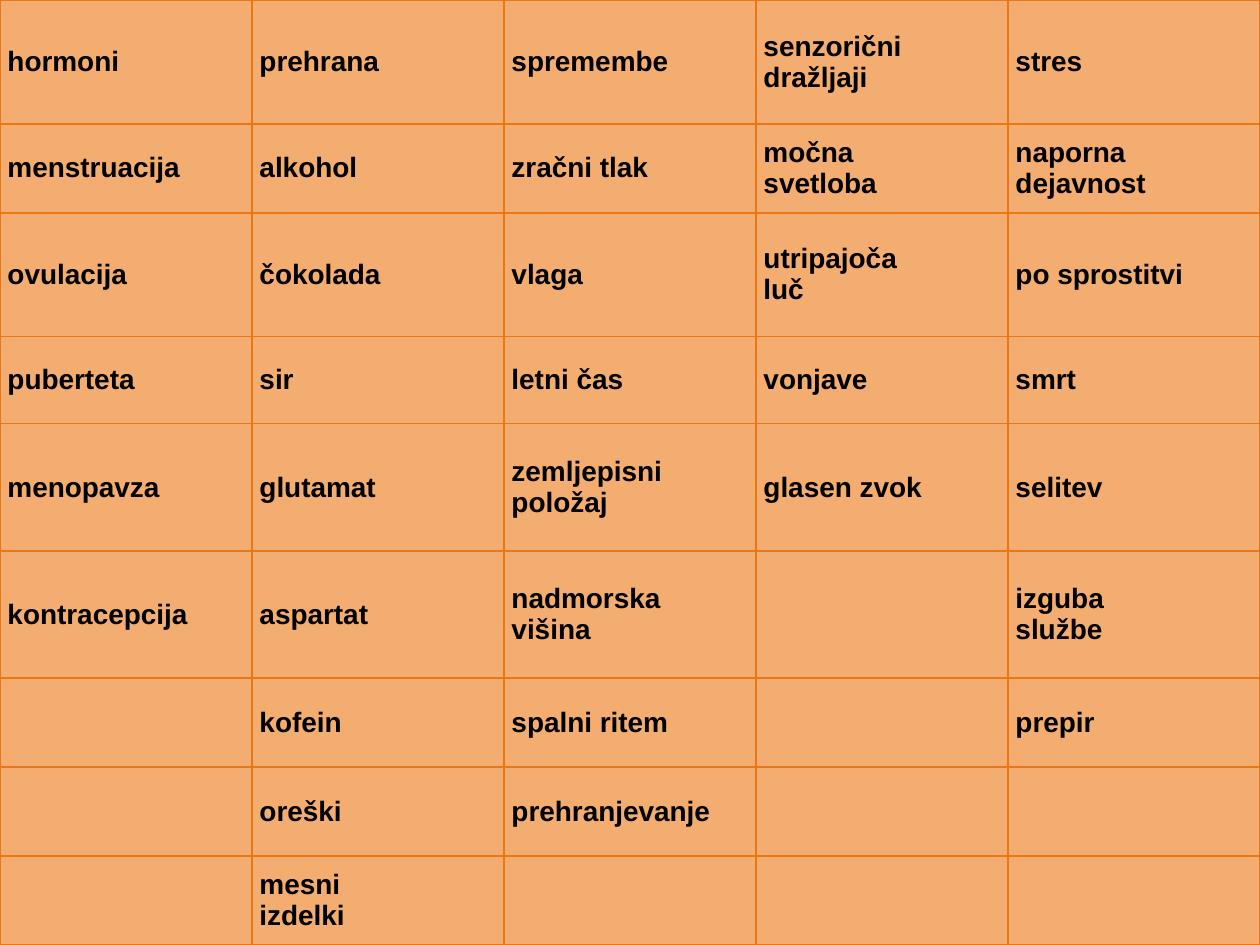
from copy import deepcopy

from lxml import etree
from pptx import Presentation
from pptx.dml.color import RGBColor
from pptx.enum.text import MSO_ANCHOR
from pptx.oxml.ns import qn
from pptx.util import Pt

MIDDLE = MSO_ANCHOR.MIDDLE
COLORS = {"cell": "F4AD70", "border": "EB7712", "text": "000000"}
SLIDE_WIDTH, SLIDE_HEIGHT = 720, 540
BLANK_LAYOUT = 6

# One list per table column, heading first; "\v" is a line break
COLUMNS = [
    ["hormoni", "menstruacija", "ovulacija", "puberteta", "menopavza",
     "kontracepcija"],
    ["prehrana", "alkohol", "čokolada", "sir", "glutamat", "aspartat",
     "kofein", "oreški", "mesni\vizdelki"],
    ["spremembe", "zračni tlak", "vlaga", "letni čas",
     "zemljepisni\vpoložaj", "nadmorska\vvišina", "spalni ritem",
     "prehranjevanje"],
    ["senzorični\vdražljaji", "močna\vsvetloba", "utripajoča\vluč",
     "vonjave", "glasen zvok"],
    ["stres", "naporna\vdejavnost", "po sprostitvi", "smrt", "selitev",
     "izguba\vslužbe", "prepir"],
]
ROW_HEIGHTS = [70.8, 50.8, 70.8, 49.8, 72.7, 72.7, 50.8, 50.8, 50.8]


def write_text(frame, text, size=16, font="Arial", color="text", bold=True):
    paragraph = frame.paragraphs[0]
    paragraph.text = text
    for run in paragraph.runs:
        run.font.size = Pt(size)
        run.font.name = font
        run.font.bold = bold
        run.font.color.rgb = RGBColor.from_string(COLORS[color])
    # Line breaks take the format of the words around them
    for line_break in frame._txBody.iter(qn("a:br")):
        line_break.append(deepcopy(paragraph.runs[0].font._element))


def add_borders(cell, color, width=1):
    properties = cell._tc.get_or_add_tcPr()
    for side in ("a:lnL", "a:lnR", "a:lnT", "a:lnB"):
        line = etree.SubElement(properties, qn(side), w=str(Pt(width)))
        fill = etree.SubElement(line, qn("a:solidFill"))
        etree.SubElement(fill, qn("a:srgbClr"), val=COLORS[color])


def format_cell(cell):
    add_borders(cell, "border")
    cell.fill.solid()
    cell.fill.fore_color.rgb = RGBColor.from_string(COLORS["cell"])
    cell.vertical_anchor = MIDDLE
    cell.margin_left = cell.margin_right = Pt(4.3)
    cell.margin_top = cell.margin_bottom = Pt(2.2)


def add_word_table(slide):
    table = slide.shapes.add_table(
        len(ROW_HEIGHTS), len(COLUMNS), Pt(0), Pt(0),
        Pt(SLIDE_WIDTH), Pt(SLIDE_HEIGHT)).table
    for row, height in zip(table.rows, ROW_HEIGHTS):
        row.height = Pt(height)
    for cell in table.iter_cells():
        format_cell(cell)
    for column, words in enumerate(COLUMNS):
        for row, word in enumerate(words):
            write_text(table.cell(row, column).text_frame, word)


def main():
    presentation = Presentation()
    presentation.slide_width = Pt(SLIDE_WIDTH)
    presentation.slide_height = Pt(SLIDE_HEIGHT)
    slide = presentation.slides.add_slide(
        presentation.slide_layouts[BLANK_LAYOUT])
    add_word_table(slide)
    presentation.save("out.pptx")


if __name__ == "__main__":
    main()
